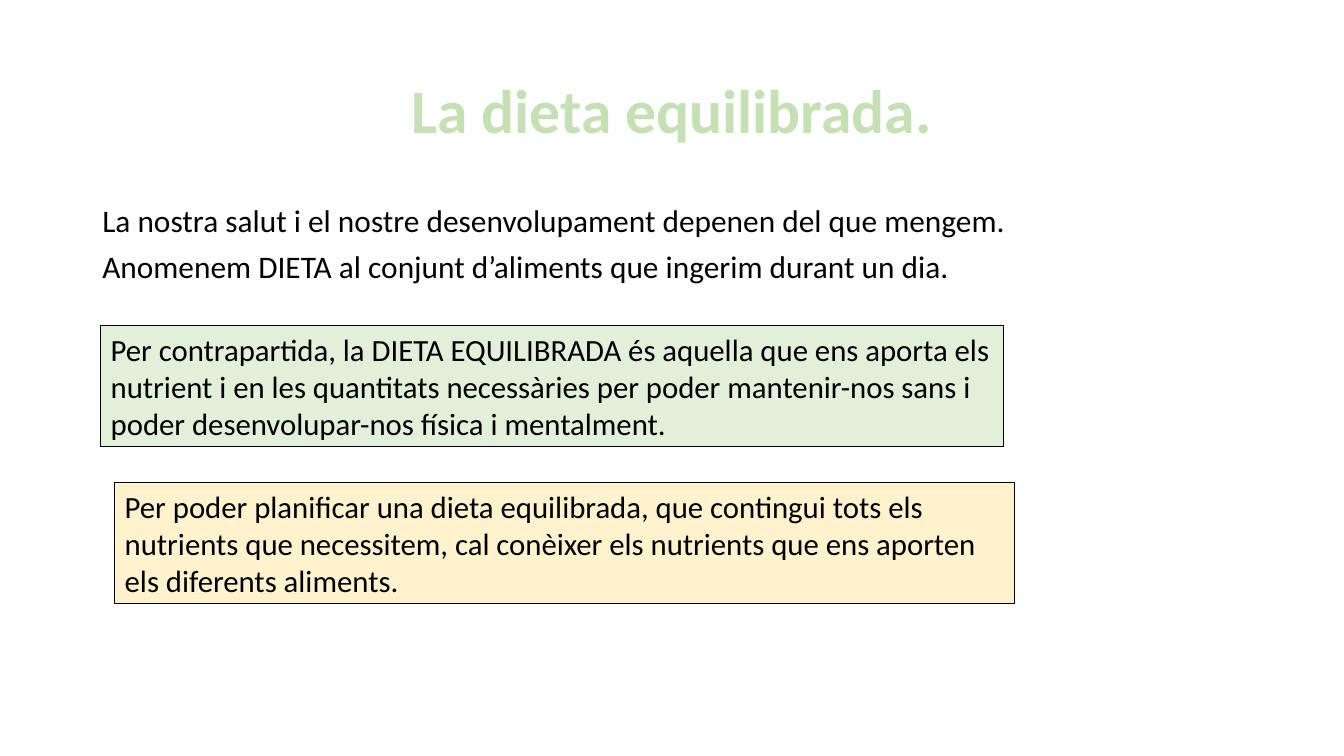
from lxml import etree
from pptx import Presentation
from pptx.dml.color import RGBColor
from pptx.enum.shapes import MSO_SHAPE
from pptx.enum.text import MSO_ANCHOR, PP_ALIGN
from pptx.oxml.ns import qn
from pptx.util import Pt

RECTANGLE = MSO_SHAPE.RECTANGLE
TOP, MIDDLE = MSO_ANCHOR.TOP, MSO_ANCHOR.MIDDLE
LEFT, CENTER = PP_ALIGN.LEFT, PP_ALIGN.CENTER
FONT = "Calibri"
BLACK, PALE_GREEN, LEAF_GREEN = "000000", "C5E0B4", "70AD47"
MINT, CREAM = "E2F0D9", "FFF2CC"

TITLE = "La dieta equilibrada."
INTRODUCTION = [
    "La nostra salut i el nostre desenvolupament depenen del que mengem.",
    "Anomenem DIETA al conjunt d’aliments que ingerim durant un dia.",
]
BALANCED_DIET = (
    "Per contrapartida, la DIETA EQUILIBRADA és aquella que ens aporta els "
    "nutrient i en les quantitats necessàries per poder mantenir-nos sans i "
    "poder desenvolupar-nos física i mentalment."
)
PLANNING = (
    "Per poder planificar una dieta equilibrada, que contingui tots els "
    "nutrients que necessitem, cal conèixer els nutrients que ens aporten "
    "els diferents aliments."
)


def color(value):
    return RGBColor.from_string(value)


def write(shape, lines, size, ink=BLACK, bold=False, align=LEFT, anchor=TOP,
          line_spacing=1.0, gap=0):
    """Fill the shape with one paragraph a line, with gap points between them."""
    frame = shape.text_frame
    frame.word_wrap = True
    frame.vertical_anchor = anchor
    frame.text = "\n".join(lines)
    for index, paragraph in enumerate(frame.paragraphs):
        paragraph.alignment = align
        paragraph.line_spacing = line_spacing
        paragraph.space_before = Pt(gap if index else 0)
        font = paragraph.font
        font.name, font.size, font.bold = FONT, Pt(size), bold
        font.color.rgb = color(ink)


def add_text(slide, left, top, width, height, lines, size, **style):
    box = slide.shapes.add_textbox(Pt(left), Pt(top), Pt(width), Pt(height))
    write(box, lines, size, **style)
    return box


def add_panel(slide, left, top, width, height, fill, text):
    panel = slide.shapes.add_shape(RECTANGLE, Pt(left), Pt(top), Pt(width), Pt(height))
    panel.shadow.inherit = False
    panel.fill.solid()
    panel.fill.fore_color.rgb = color(fill)
    panel.line.color.rgb = color(BLACK)
    panel.line.width = Pt(0.5)
    write(panel, [text], 22)


def outline_text(box, ink, width):
    """Draw a thin line around the letters of every run."""
    for paragraph in box.text_frame.paragraphs:
        for run in paragraph.runs:
            properties = run.font._element
            line = etree.Element(qn("a:ln"), w=str(Pt(width)))
            fill = etree.SubElement(line, qn("a:solidFill"))
            etree.SubElement(fill, qn("a:srgbClr"), val=ink)
            properties.insert(0, line)


def main():
    presentation = Presentation()
    presentation.slide_width, presentation.slide_height = Pt(960), Pt(540)
    slide = presentation.slides.add_slide(presentation.slide_layouts[6])

    title = add_text(slide, 66, 28.8, 828, 104.4, [TITLE], 44, ink=PALE_GREEN,
                     bold=True, align=CENTER, anchor=MIDDLE, line_spacing=0.9)
    outline_text(title, LEAF_GREEN, 0.52)
    add_text(slide, 66, 144, 828, 93, INTRODUCTION, 22.4, line_spacing=0.86, gap=10)
    add_panel(slide, 72, 232.5, 645, 86.4, MINT, BALANCED_DIET)
    add_panel(slide, 82, 344.8, 642.5, 86.4, CREAM, PLANNING)

    presentation.save("out.pptx")


if __name__ == "__main__":
    main()
